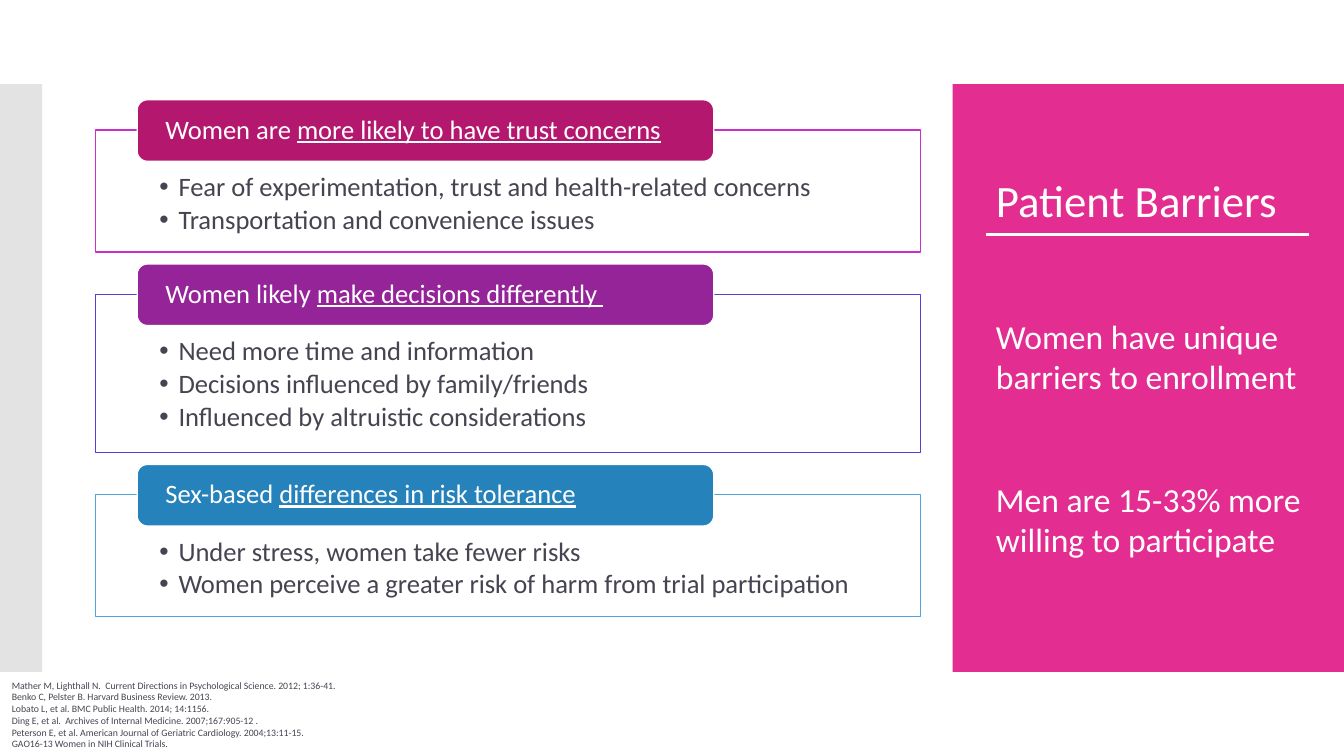
from dataclasses import dataclass

import pptx
import pptx.dml.color
import pptx.enum.shapes
import pptx.enum.text
import pptx.oxml.ns
import pptx.util
from lxml import etree

Pt = pptx.util.Pt
RGBColor = pptx.dml.color.RGBColor
Anchor = pptx.enum.text.MSO_ANCHOR
Align = pptx.enum.text.PP_ALIGN
Preset = pptx.enum.shapes.MSO_SHAPE
qn = pptx.oxml.ns.qn

WHITE = RGBColor(0xFF, 0xFF, 0xFF)
INK = RGBColor(0x45, 0x45, 0x51)
PINK = RGBColor(0xE3, 0x2D, 0x91)
GREY = RGBColor(0xC8, 0xC8, 0xC8)
BERRY = RGBColor(0xB4, 0x18, 0x6E)
MAGENTA = RGBColor(0xC8, 0x30, 0xCC)
PURPLE = RGBColor(0x96, 0x24, 0x99)
INDIGO = RGBColor(0x59, 0x3E, 0xD5)
BLUE = RGBColor(0x25, 0x82, 0xBB)
SKY = RGBColor(0x4E, 0xA6, 0xDC)

FONT = "Calibri"
SLIDE_WIDTH, SLIDE_HEIGHT = 960, 540
PANEL_TOP, PANEL_HEIGHT = 60, 420
PANEL_LEFT = 680.4
SIDE_LEFT, SIDE_WIDTH = 704.2, 232.6
LIST_LEFT, LIST_WIDTH, LIST_TOP, LIST_GAP = 68.4, 589, 92.9, 30.2
BANNER_LEFT, BANNER_WIDTH, BANNER_HEIGHT, BANNER_RISE = 98, 411.8, 43.9, 21.6
HANG = 13.7


@dataclass
class Barrier:
    plain: str
    underlined: str
    points: list[str]
    height: float
    fill: RGBColor
    border: RGBColor
    placeholder: int


BARRIERS = [
    Barrier("Women are ", "more likely to have trust concerns",
            ["Fear of experimentation, trust and health-related concerns",
             "Transportation and convenience issues"],
            87.1, BERRY, MAGENTA, 1),
    Barrier("Women likely ", "make decisions differently ",
            ["Need more time and information",
             "Decisions influenced by family/friends",
             "Influenced by altruistic considerations"],
            113, PURPLE, INDIGO, 2),
    Barrier("Sex-based ", "differences in risk tolerance",
            ["Under stress, women take fewer risks",
             "Women perceive a greater risk of harm from trial participation"],
            87.1, BLUE, SKY, 3),
]
STATEMENTS = ["Women have unique barriers to enrollment",
              "Men are 15-33% more willing to participate"]
REFERENCES = [
    "Mather M, Lighthall N.  Current Directions in Psychological Science. 2012; 1:36-41.",
    "Benko C, Pelster B. Harvard Business Review. 2013.",
    "Lobato L, et al. BMC Public Health. 2014; 14:1156.",
    "Ding E, et al.  Archives of Internal Medicine. 2007;167:905-12 .",
    "Peterson E, et al. American Journal of Geriatric Cardiology. 2004;13:11-15.",
    "GAO16-13 Women in NIH Clinical Trials.",
]


def place(box, left: float, top: float, width: float, height: float) -> None:
    box.left, box.top = Pt(left), Pt(top)
    box.width, box.height = Pt(width), Pt(height)


def set_fill(box, color: RGBColor, opacity: int = 100) -> None:
    box.fill.solid()
    box.fill.fore_color.rgb = color
    if opacity < 100:
        swatch = box.element.spPr.find(".//" + qn("a:srgbClr"))
        etree.SubElement(swatch, qn("a:alpha")).set("val", str(opacity * 1000))


def set_border(box, color: RGBColor) -> None:
    box.line.color.rgb = color
    box.line.width = Pt(0.85)


def add_block(page, preset, left: float, top: float, width: float, height: float,
              color: RGBColor, opacity: int = 100):
    block = page.shapes.add_shape(preset, Pt(left), Pt(top), Pt(width), Pt(height))
    block.shadow.inherit = False
    set_fill(block, color, opacity)
    block.line.fill.background()
    return block


def set_frame(box, anchor, insets: tuple = (7.2, 3.6, 7.2, 3.6)) -> None:
    frame = box.text_frame
    frame.word_wrap = True
    frame.auto_size = pptx.enum.text.MSO_AUTO_SIZE.NONE
    frame.vertical_anchor = anchor
    (frame.margin_left, frame.margin_top,
     frame.margin_right, frame.margin_bottom) = map(Pt, insets)


def set_bullet(para, character: str = "") -> None:
    """Give the paragraph a hanging bullet, or none without a character."""
    properties = para._p.get_or_add_pPr()
    hang = int(Pt(HANG)) if character else 0
    properties.set("marL", str(hang))
    properties.set("indent", str(-hang))
    if character:
        etree.SubElement(properties, qn("a:buChar")).set("char", character)
    else:
        etree.SubElement(properties, qn("a:buNone"))


def format_text(box, size: float, color: RGBColor, bullet: str = "",
                spacing: float = 1, after: float = 0, between: float = 0) -> None:
    for index, para in enumerate(box.text_frame.paragraphs):
        set_bullet(para, bullet)
        para.alignment = Align.LEFT
        para.line_spacing = spacing
        para.space_before = Pt(between if index else 0)
        para.space_after = Pt(after)
        for span in para.runs:
            span.font.name, span.font.size = FONT, Pt(size)
            span.font.bold = False
            span.font.color.rgb = color


def add_barrier(page, barrier: Barrier, top: float) -> None:
    box = page.placeholders[barrier.placeholder]
    place(box, LIST_LEFT, top, LIST_WIDTH, barrier.height)
    set_fill(box, WHITE, 90)
    set_border(box, barrier.border)
    set_frame(box, Anchor.TOP, (45.4, 31, 45.4, 10.8))
    box.text_frame.text = "\n".join(barrier.points)
    format_text(box, 19, INK, bullet="•", spacing=0.9, after=2.85)

    banner = add_block(page, Preset.ROUNDED_RECTANGLE, BANNER_LEFT, top - BANNER_RISE,
                       BANNER_WIDTH, BANNER_HEIGHT, barrier.fill)
    set_border(banner, WHITE)
    set_frame(banner, Anchor.MIDDLE, (18, 0, 18, 0))
    para = banner.text_frame.paragraphs[0]
    para.text = barrier.plain
    span = para.add_run()
    span.text = barrier.underlined
    format_text(banner, 19, WHITE, spacing=0.9)
    span.font.underline = True


def add_side_panel(page) -> None:
    title = page.shapes.title
    panel = add_block(page, Preset.RECTANGLE, PANEL_LEFT, PANEL_TOP,
                      SLIDE_WIDTH - PANEL_LEFT, PANEL_HEIGHT, PINK)
    title.element.addprevious(panel.element)

    place(title, SIDE_LEFT, 119.5, SIDE_WIDTH, 46.3)
    set_frame(title, Anchor.TOP)
    title.text_frame.text = "Patient Barriers"
    format_text(title, 32, WHITE)

    body = page.placeholders[4]
    place(body, SIDE_LEFT, 222, SIDE_WIDTH, 210)
    set_frame(body, Anchor.TOP)
    body.text_frame.text = "\n".join(STATEMENTS)
    format_text(body, 24, WHITE, between=58.6)

    rule = page.shapes.add_connector(pptx.enum.shapes.MSO_CONNECTOR.STRAIGHT,
                                     Pt(SIDE_LEFT), Pt(167.8), Pt(935.3), Pt(167.8))
    rule.line.color.rgb = WHITE
    rule.line.width = Pt(2.25)
    etree.SubElement(rule.element.spPr, qn("a:effectLst"))


def add_references(page) -> None:
    box = page.shapes.add_textbox(Pt(1.4), Pt(481.7), Pt(257), Pt(58.3))
    set_frame(box, Anchor.TOP)
    box.text_frame.text = "\n".join(REFERENCES)
    format_text(box, 7, INK)


def main() -> None:
    deck = pptx.Presentation()
    deck.slide_width, deck.slide_height = Pt(SLIDE_WIDTH), Pt(SLIDE_HEIGHT)
    page = deck.slides.add_slide(deck.slide_layouts.get_by_name("Comparison"))
    add_side_panel(page)
    add_block(page, Preset.RECTANGLE, 0, PANEL_TOP, 30.2, PANEL_HEIGHT, GREY, 50)
    top = LIST_TOP
    for barrier in BARRIERS:
        add_barrier(page, barrier, top)
        top += barrier.height + LIST_GAP
    add_references(page)
    deck.save("out.pptx")


if __name__ == "__main__":
    main()
